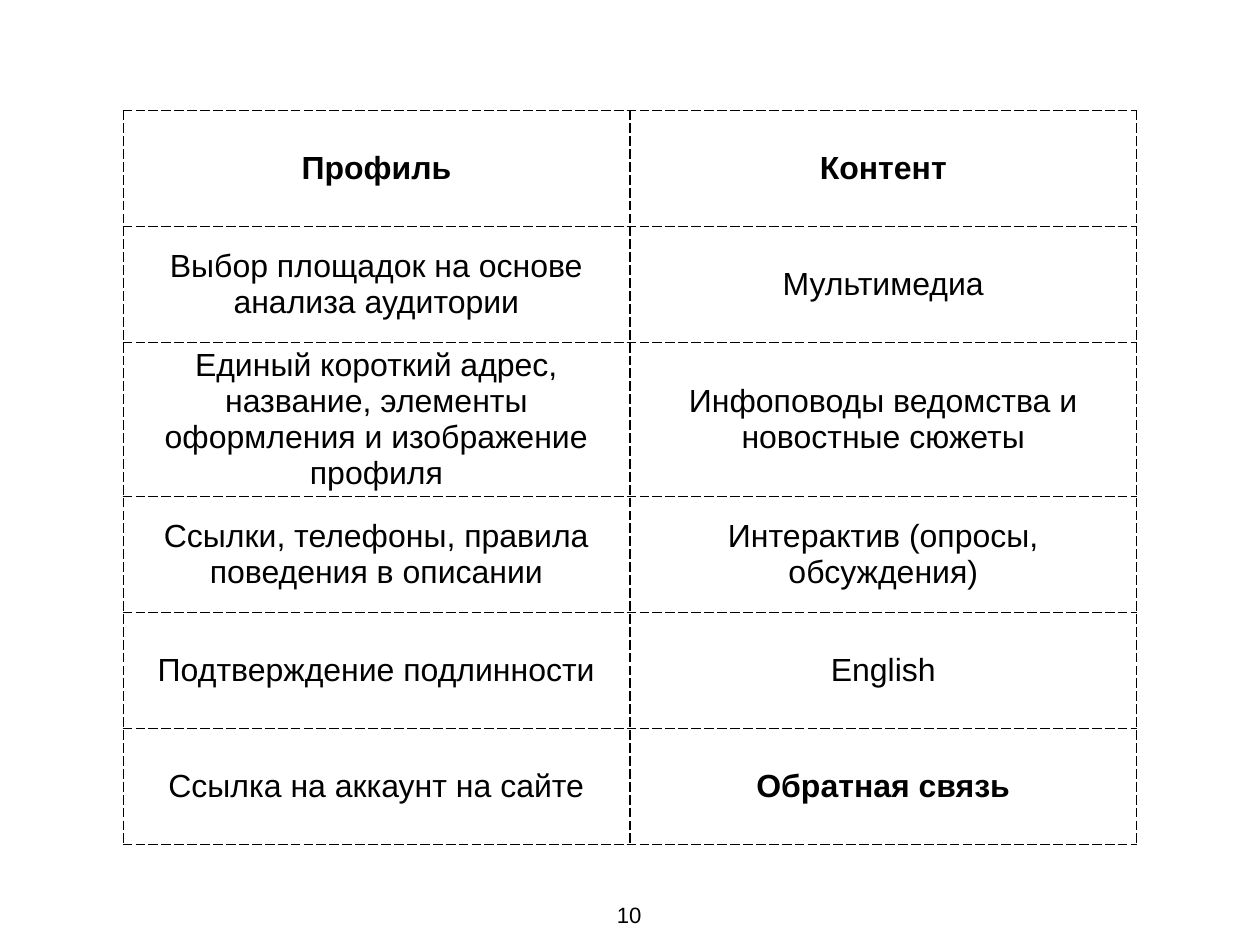
from dataclasses import dataclass

from lxml.etree import SubElement
from pptx import Presentation
from pptx.dml.color import RGBColor
from pptx.enum.text import MSO_ANCHOR, MSO_AUTO_SIZE, PP_ALIGN
from pptx.oxml import parse_xml
from pptx.oxml.ns import nsdecls, qn
from pptx.slide import Slide
from pptx.table import _Cell as Cell
from pptx.text.text import TextFrame
from pptx.util import Inches, Pt

BLACK = RGBColor(0, 0, 0)
FONT = "Arial"
PAD = Inches(0.06)
WIDTH = 5.72
HEIGHT = 1.31
TALL = 1.58


@dataclass
class Row:
    left: str
    right: str
    height: float = HEIGHT
    bold: tuple[bool, bool] = (False, False)


ROWS = [
    Row("Профиль", "Контент", bold=(True, True)),
    Row("Выбор площадок на основе анализа аудитории", "Мультимедиа"),
    Row("Единый короткий адрес, название, элементы оформления и изображение профиля",
        "Инфоповоды ведомства и новостные сюжеты", height=TALL),
    Row("Ссылки, телефоны, правила поведения в описании",
        "Интерактив (опросы, обсуждения)"),
    Row("Подтверждение подлинности", "English"),
    Row("Ссылка на аккаунт на сайте", "Обратная связь", bold=(False, True)),
]


def write(frame: TextFrame, text: str, *, size: float, bold: bool = False,
          color: RGBColor = BLACK) -> None:
    para = frame.paragraphs[0]
    para.alignment = PP_ALIGN.CENTER
    run = para.add_run()
    run.text = text
    run.font.name = FONT
    run.font.size = Pt(size)
    run.font.bold = bold
    run.font.color.rgb = color


def pad(box: Cell | TextFrame) -> None:
    """Set the same inner margin on all four sides."""
    box.margin_left = box.margin_right = PAD
    box.margin_top = box.margin_bottom = PAD


def border(cell: Cell) -> None:
    """Draw a dashed line on each side of the cell."""
    props = cell._tc.get_or_add_tcPr()
    for spot, side in enumerate("LRTB"):
        line = parse_xml(f'<a:ln{side} {nsdecls("a")} w="{Pt(1)}"/>')
        fill = SubElement(line, qn("a:solidFill"))
        SubElement(fill, qn("a:srgbClr"), val=str(BLACK))
        SubElement(line, qn("a:prstDash"), val="lgDash")
        props.insert(spot, line)


def add_grid(slide: Slide, rows: list[Row]) -> None:
    total = sum(row.height for row in rows)
    table = slide.shapes.add_table(
        len(rows), 2, Inches(1.39), Inches(1.25),
        Inches(2 * WIDTH), Inches(total)).table
    table.first_row = table.horz_banding = False
    for column in table.columns:
        column.width = Inches(WIDTH)
    for line, row in zip(table.rows, rows):
        line.height = Inches(row.height)
        for cell, text, bold in zip(line.cells, (row.left, row.right), row.bold):
            cell.fill.background()
            cell.vertical_anchor = MSO_ANCHOR.MIDDLE
            pad(cell)
            border(cell)
            write(cell.text_frame, text, size=26, bold=bold)


def add_number(slide: Slide, text: str) -> None:
    box = slide.shapes.add_textbox(Inches(6.9), Inches(10.12),
                                   Inches(0.4), Inches(0.42))
    frame = box.text_frame
    frame.word_wrap = False
    frame.auto_size = MSO_AUTO_SIZE.SHAPE_TO_FIT_TEXT
    pad(frame)
    write(frame, text, size=18)


def main() -> None:
    deck = Presentation()
    deck.slide_width = Inches(14.22)
    deck.slide_height = Inches(10.67)
    slide = deck.slides.add_slide(deck.slide_layouts[6])
    add_grid(slide, ROWS)
    add_number(slide, "10")
    deck.save("out.pptx")


if __name__ == "__main__":
    main()
